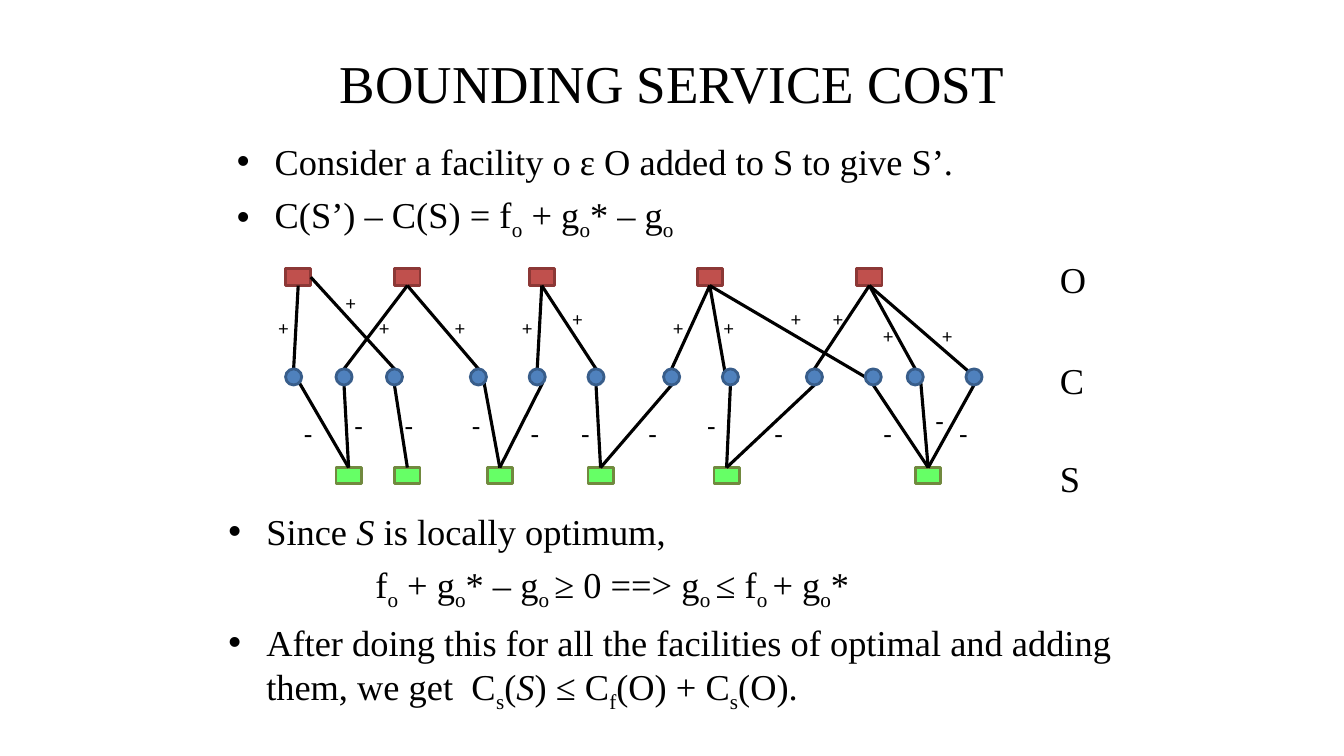
from pptx import Presentation
from pptx.dml.color import RGBColor as RGB
from pptx.enum.shapes import MSO_CONNECTOR as Connector, MSO_SHAPE as Shape
from pptx.enum.text import MSO_ANCHOR as Anchor, MSO_AUTO_SIZE as AutoSize, PP_ALIGN as Align
from pptx.oxml.ns import qn
from pptx.util import Pt
from lxml.etree import SubElement

THEME = {
    "ink": RGB.from_string("000000"),
    "facility": ("C0504D", "8C3836"),
    "client": ("4F81BD", "385D8A"),
    "server": ("66FF66", "71893F"),
    "serif": "Times New Roman", "sans": "Calibri",
    "title": Pt(38), "body": Pt(26), "plus": Pt(14), "minus": Pt(20),
    "outline": Pt(2), "edge": Pt(2.25),
}


def write(frame, lines, font, size, **para_format):
    """Write lines into a frame; in a line, |_ starts a subscript and |/ an italic span."""
    for number, line in enumerate(lines):
        para = frame.add_paragraph() if number else frame.paragraphs[0]
        for name, value in para_format.items():
            setattr(para, name, value)
        for piece in line.split("|"):
            span = para.add_run()
            span.text = piece.lstrip("_/")
            for name, value in {"name": font, "size": size}.items():
                setattr(span.font, name, value)
            span.font.color.rgb = THEME["ink"]
            if piece.startswith("_"):
                span._r.get_or_add_rPr().set("baseline", "-25000")
            elif piece.startswith("/"):
                span.font.italic = True


def add_node(kind, role, left, top, width, height):
    node = page.shapes.add_shape(kind, Pt(left), Pt(top), Pt(width), Pt(height))
    fill, outline = THEME[role]
    node.shadow.inherit = False
    node.fill.solid()
    node.fill.fore_color.rgb = RGB.from_string(fill)
    node.line.color.rgb = RGB.from_string(outline)
    node.line.width = THEME["outline"]
    return node


deck = Presentation()
deck.slide_width, deck.slide_height = Pt(960), Pt(540)
page = deck.slides.add_slide(deck.slide_layouts[3])  # title and two bodies
title, premise, result = page.placeholders

# Title and the two bullet lists
for holder, place in [(title, (156, 21.6, 648, 74)),
                      (premise, (162, 96, 636, 84)),
                      (result, (156, 360, 660, 156))]:
    for name, value in zip(("left", "top", "width", "height"), place):
        setattr(holder, name, Pt(value))
    holder.text_frame.auto_size = AutoSize.NONE
title.text_frame.vertical_anchor = Anchor.MIDDLE
write(title.text_frame, ["BOUNDING SERVICE COST"], THEME["serif"], THEME["title"],
      alignment=Align.CENTER)

bullets = [
    (premise, ["Consider a facility o ε O added to S to give S’.",
               "C(S’) – C(S) = f|_o| + g|_o|* – g|_o"]),
    (result, ["Since |/S| is locally optimum,",
              "f|_o| + g|_o|* – g|_o |≥ 0 ==> g|_o |≤ f|_o |+ g|_o|*",
              "After doing this for all the facilities of optimal and adding them, "
              "we get  C|_s|(|/S|) ≤ C|_f|(O) + C|_s|(O)."]),
]
for holder, lines in bullets:
    write(holder.text_frame, lines, THEME["serif"], THEME["body"], space_before=Pt(6.5))
    for para in holder.text_frame.paragraphs:
        props = para._p.get_or_add_pPr()
        is_formula = para.text.startswith("f")
        props.set("marL", str(Pt(105 if is_formula else 27)))
        props.set("indent", str(Pt(0 if is_formula else -27)))
        if is_formula:
            SubElement(props, qn("a:buNone"))

# Facilities of O above, of S below
facilities = [add_node(Shape.RECTANGLE, "facility", left, 192, 18, 12)
              for left in (204, 282, 378, 498, 612)]
servers = [add_node(Shape.RECTANGLE, "server", left, 334, 18, 11.5)
           for left in (240, 282, 348, 420, 510, 654)]

# Points on a client's circle, as offsets from its centre
CLIENT_TOP, RADIUS = 263.5, 5.75
TOP, BOTTOM, LEFT = (0, -RADIUS), (0, RADIUS), (-RADIUS, 0)
TOP_LEFT, BOTTOM_RIGHT = (-4, -4), (4, 4)
RECT_TOP, RECT_BOTTOM, RECT_RIGHT = 0, 2, 3

# Client left, facility, its side, upper point, server, lower point, + place, - place
clients = [
    (204, 0, RECT_BOTTOM, TOP, 0, BOTTOM_RIGHT, (192, 222), (210, 294)),
    (240, 1, RECT_BOTTOM, TOP, 0, BOTTOM, (264, 222), (246, 288)),
    (276, 0, RECT_RIGHT, TOP, 1, BOTTOM, (240, 204), (282, 288)),
    (336, 1, RECT_BOTTOM, TOP, 2, BOTTOM_RIGHT, (318, 222), (330, 288)),
    (378, 2, RECT_BOTTOM, TOP, 2, BOTTOM_RIGHT, (366, 222), (372, 294)),
    (420, 2, RECT_BOTTOM, TOP, 3, BOTTOM, (402, 216), (408, 294)),
    (474, 3, RECT_BOTTOM, TOP, 3, BOTTOM, (474, 222), (456, 294)),
    (516, 3, RECT_BOTTOM, TOP_LEFT, 4, BOTTOM, (510, 222), (498, 288)),
    (576, 4, RECT_BOTTOM, TOP, 4, BOTTOM, (588, 216), (546, 294)),
    (618, 3, RECT_BOTTOM, LEFT, 5, BOTTOM, (558, 216), (624, 294)),
    (648, 4, RECT_BOTTOM, TOP, 5, BOTTOM_RIGHT, (624, 228), (661, 284.5)),
    (690, 4, RECT_BOTTOM, TOP_LEFT, 5, BOTTOM, (666, 228), (678, 294)),
]

# Row names, then each client with its two edges and their signs
labels = [(name, (750, top), (42, 39), THEME["serif"], THEME["body"])
          for name, top in (("O", 180), ("C", 252), ("S", 322.5))]
for left, facility, side, upper, server, lower, plus, minus in clients:
    for box, site, (dx, dy) in [(facilities[facility], side, upper),
                                (servers[server], RECT_TOP, lower)]:
        x, y = Pt(left + RADIUS + dx), Pt(CLIENT_TOP + RADIUS + dy)
        edge = page.shapes.add_connector(Connector.STRAIGHT, x, y, x, y)
        edge.end_connect(box, site)
        edge.line.color.rgb = THEME["ink"]
        edge.line.width = THEME["edge"]
        SubElement(edge._element.spPr, qn("a:effectLst"))
    add_node(Shape.OVAL, "client", left, CLIENT_TOP, 2 * RADIUS, 2 * RADIUS)
    labels += [("+", plus, (21.6, 24.5), THEME["sans"], THEME["plus"]),
               ("-", minus, (21.6, 31.7), THEME["sans"], THEME["minus"])]

for text, place, extent, font, size in labels:
    box = page.shapes.add_textbox(*map(Pt, place + extent))
    for name, value in {"word_wrap": True, "auto_size": AutoSize.SHAPE_TO_FIT_TEXT}.items():
        setattr(box.text_frame, name, value)
    write(box.text_frame, [text], font, size)

deck.save("out.pptx")
